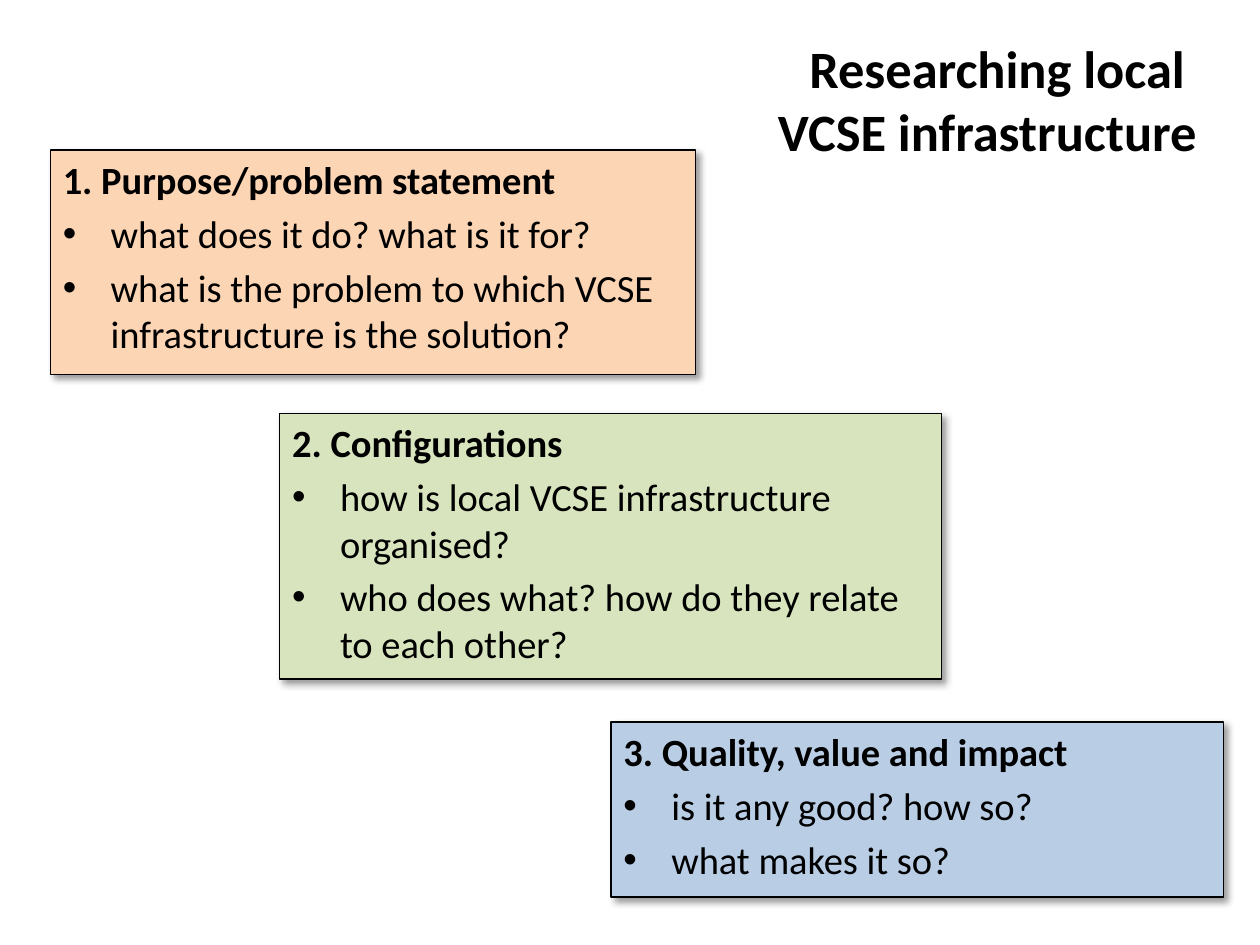
from lxml.etree import SubElement
from pptx import Presentation
from pptx.dml.color import RGBColor
from pptx.enum.shapes import MSO_SHAPE as Shape
from pptx.enum.text import MSO_ANCHOR as Anchor, PP_ALIGN as Align
from pptx.oxml.ns import qn
from pptx.util import Inches, Pt

BLACK = "000000"


def colour(value):
    return RGBColor.from_string(value)


class SlideBuilder:
    font = "Calibri"
    title_size = 30
    body_size = 22
    indent = Inches(0.38)

    def __init__(self, slide):
        self.slide = slide

    def span(self, para, text, size, bold=False):
        span = para.add_run()
        span.text = text
        span.font.name = self.font
        span.font.size = Pt(size)
        span.font.bold = bold
        span.font.color.rgb = colour(BLACK)

    def title(self, lines, left, top, width, height):
        box = self.slide.shapes.add_textbox(
            Inches(left), Inches(top), Inches(width), Inches(height))
        frame = box.text_frame
        frame.word_wrap = True
        frame.vertical_anchor = Anchor.MIDDLE
        para = frame.paragraphs[0]
        para.alignment = Align.RIGHT
        for number, line in enumerate(lines):
            if number:
                para.add_line_break()
            self.span(para, line, self.title_size, bold=True)

    def shadow(self, box):
        """Give the box a soft shadow down and to the right."""
        box.shadow.inherit = False
        effects = box._element.spPr.find(qn("a:effectLst"))
        outer = SubElement(effects, qn("a:outerShdw"), blurRad=str(Pt(4)),
                           dist=str(Pt(3)), dir=str(45 * 60000),
                           algn="tl", rotWithShape="0")
        tint = SubElement(outer, qn("a:srgbClr"), val=BLACK)
        SubElement(tint, qn("a:alpha"), val="40000")

    def bullet(self, para):
        props = para._p.get_or_add_pPr()
        props.set("marL", str(self.indent))
        props.set("indent", str(-self.indent))
        SubElement(props, qn("a:buFont"), typeface="Arial")
        SubElement(props, qn("a:buChar"), char="•")

    def question_box(self, heading, questions, fill, left, top, width, height):
        box = self.slide.shapes.add_shape(
            Shape.RECTANGLE,
            Inches(left), Inches(top), Inches(width), Inches(height))
        box.fill.solid()
        box.fill.fore_color.rgb = colour(fill)
        box.line.color.rgb = colour(BLACK)
        box.line.width = Pt(0.75)
        self.shadow(box)

        frame = box.text_frame
        frame.word_wrap = True
        frame.vertical_anchor = Anchor.TOP
        for number, text in enumerate([heading, *questions]):
            para = frame.add_paragraph() if number else frame.paragraphs[0]
            para.alignment = Align.LEFT
            para.space_before = Pt(0.2 * self.body_size)
            if number:
                self.bullet(para)
            self.span(para, text, self.body_size, bold=number == 0)


def main():
    deck = Presentation()
    deck.slide_width, deck.slide_height = Inches(10), Inches(7.5)
    page = SlideBuilder(deck.slides.add_slide(deck.slide_layouts[6]))

    page.title(["Researching local ", "VCSE infrastructure"],
               4.74, 0.38, 4.86, 0.81)
    page.question_box(
        "1. Purpose/problem statement",
        ["what does it do? what is it for?",
         "what is the problem to which VCSE infrastructure is the solution?"],
        "FCD5B5", 0.4, 1.19, 5.12, 1.78)
    page.question_box(
        "2. Configurations",
        ["how is local VCSE infrastructure organised?",
         "who does what? how do they relate to each other?"],
        "D7E4BD", 2.22, 3.28, 5.25, 2.11)
    page.question_box(
        "3. Quality, value and impact",
        ["is it any good? how so?", "what makes it so?"],
        "B9CDE5", 4.85, 5.73, 4.86, 1.39)

    deck.save("out.pptx")


if __name__ == "__main__":
    main()
